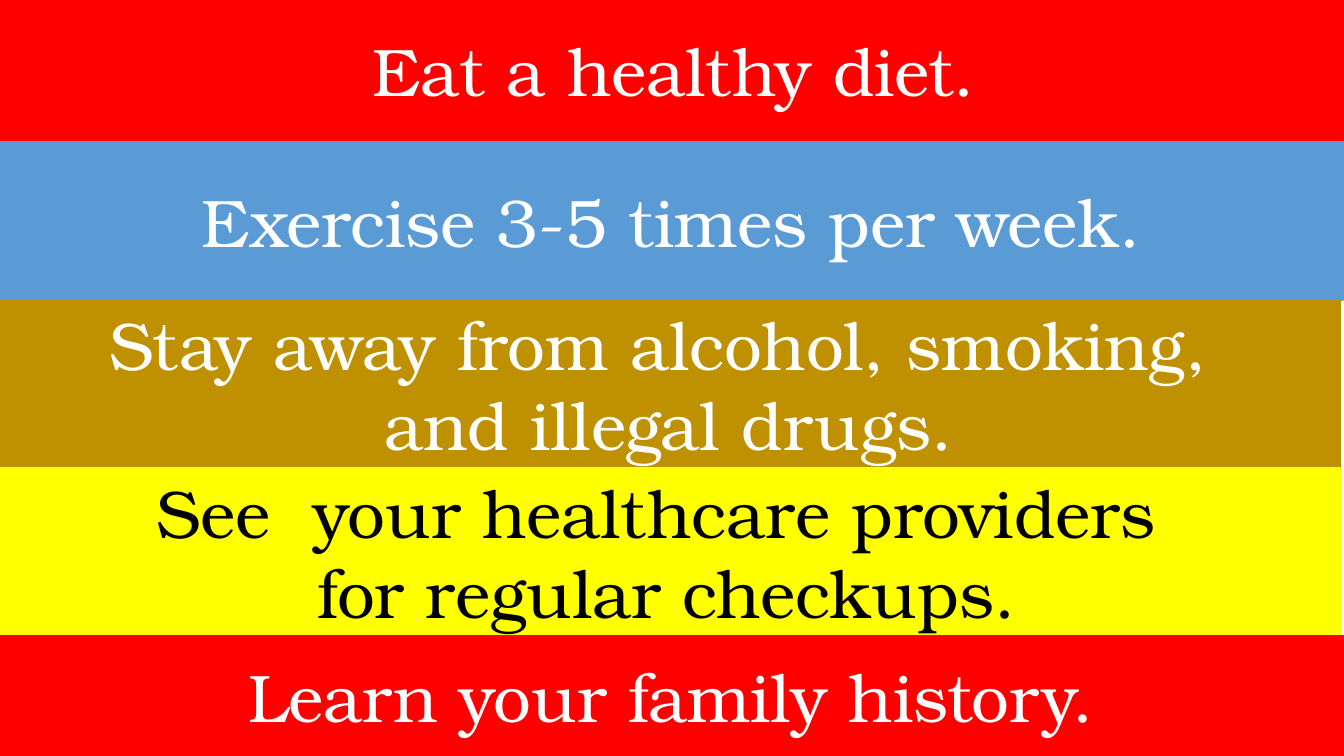
"""Build a slide of five stacked bands of health advice."""
from typing import NamedTuple

from pptx import Presentation
from pptx import util as u
from pptx.dml.color import RGBColor
from pptx.enum import shapes, text

COLS = 1000
TOP = -2
RED = RGBColor(0xFF, 0x00, 0x00)
BLUE = RGBColor(0x5B, 0x9B, 0xD5)
GOLD = RGBColor(0xBF, 0x90, 0x00)
YELLOW = RGBColor(0xFF, 0xFF, 0x00)
WHITE = RGBColor(0xFF, 0xFF, 0xFF)
BLACK = RGBColor(0x00, 0x00, 0x00)
FONT = {"name": "TeX Gyre Bonum", "size": u.Pt(36)}


class Band(NamedTuple):
    """A full-width stripe, measured in cells of a square grid."""
    col: int
    wide: int
    high: int
    fill: RGBColor
    ink: RGBColor
    lines: tuple[str, ...]


BANDS = (
    Band(0, 1003, 108, RED, WHITE, ("Eat a healthy diet.",)),
    Band(0, 999, 117, BLUE, WHITE, ("Exercise 3-5 times per week.",)),
    Band(-2, 999, 125, GOLD, WHITE,
         ("Stay away from alcohol, smoking, ", "and illegal drugs.")),
    Band(-5, 1002, 125, YELLOW, BLACK,
         ("See  your healthcare providers ", "for regular checkups.")),
    Band(-2, 1003, 90, RED, WHITE, ("Learn your family history.",)),
)


def draw(slide, band: Band, top: int, cell: int) -> None:
    """Draw one band with its centred lines."""
    box = slide.shapes.add_shape(
        shapes.MSO_SHAPE.RECTANGLE, band.col * cell, top * cell,
        band.wide * cell, band.high * cell)
    box.shadow.inherit = False
    for paint in (box.fill, box.line.fill):
        paint.solid()
        paint.fore_color.rgb = band.fill
    box.line.width = u.Pt(1)
    frame = box.text_frame
    frame.word_wrap = True
    frame.vertical_anchor = text.MSO_ANCHOR.MIDDLE
    frame.text = "\n".join(band.lines)
    for para in frame.paragraphs:
        para.alignment = text.PP_ALIGN.CENTER
        for run in para.runs:
            for key, value in FONT.items():
                setattr(run.font, key, value)
            run.font.color.rgb = band.ink


def main() -> None:
    """Stack the bands down a 16:9 slide and save it."""
    deck = Presentation()
    deck.slide_width = u.Inches(10)
    deck.slide_height = deck.slide_width * 9 // 16
    slide = deck.slides.add_slide(deck.slide_layouts[6])
    cell = deck.slide_width // COLS
    top = TOP
    for band in BANDS:
        draw(slide, band, top, cell)
        top += band.high
    deck.save("out.pptx")


if __name__ == "__main__":
    main()
